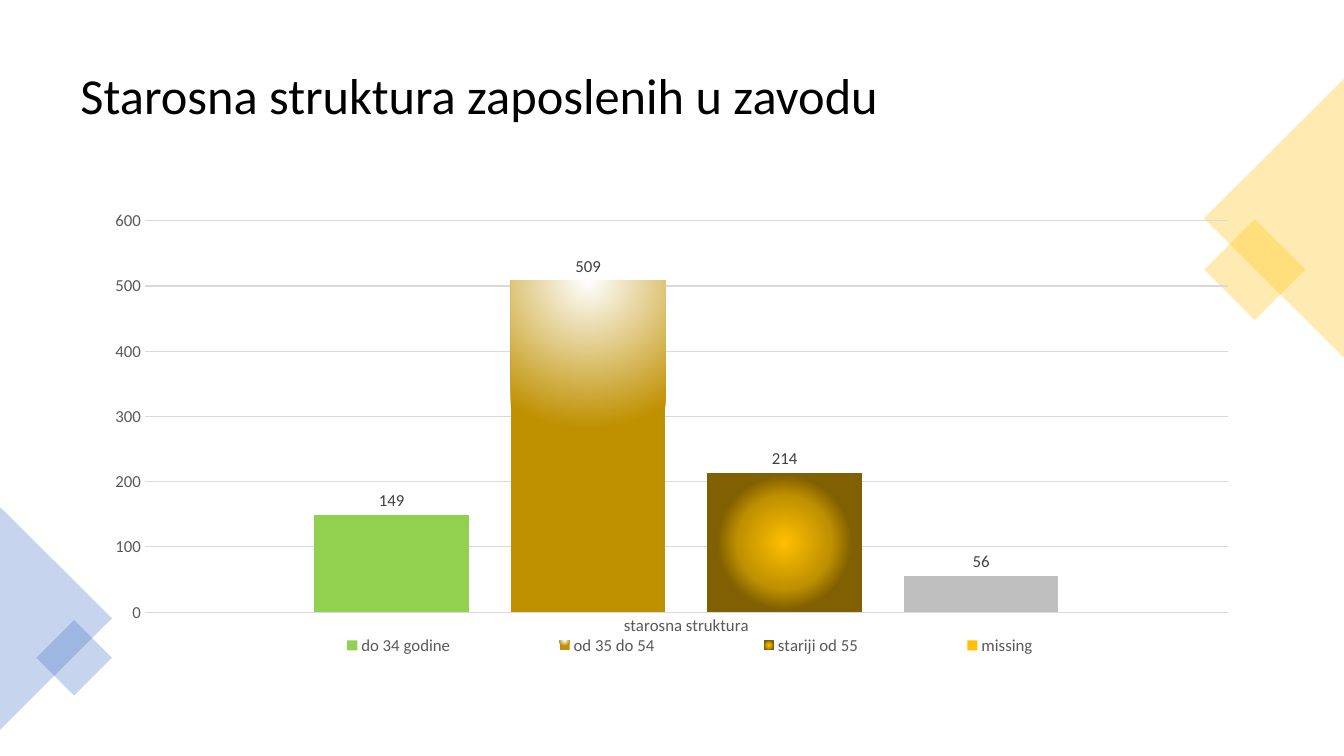
from lxml import etree
from pptx import Presentation
from pptx.chart.data import CategoryChartData
from pptx.dml.color import RGBColor
from pptx.enum.chart import XL_CHART_TYPE as ChartType, XL_LABEL_POSITION as LabelPosition
from pptx.enum.chart import XL_LEGEND_POSITION as LegendPosition, XL_TICK_MARK as TickMark
from pptx.enum.shapes import MSO_SHAPE as Shape
from pptx.enum.text import MSO_ANCHOR as Anchor
from pptx.oxml import parse_xml
from pptx.oxml.ns import nsdecls, qn
from pptx.util import Inches, Pt


class Theme:
    """Colours, font and type sizes of the slide."""
    font = "Calibri"
    title_size, chart_size = 36, 12
    black, axis_text, label_text, grid = "000000", "595959", "404040", "D9D9D9"
    gold, blue, green, gray = "FFC000", "4472C4", "92D050", "BFBFBF"
    white, ochre, brown = "FFFFFF", "BF9000", "806000"


def style_font(font, size, color):
    """Set typeface, size and colour on a font."""
    font.name, font.size = Theme.font, Pt(size)
    font.color.rgb = RGBColor.from_string(color)


def add_text(box, text, size=Theme.title_size, color=Theme.black, spacing=0.9):
    """Write one formatted paragraph into a box."""
    para = box.text_frame.paragraphs[0]
    para.line_spacing = spacing
    span = para.add_run()
    span.text = text
    style_font(span.font, size, color)


def solid(target, color):
    """Give an element a plain fill."""
    target.fill.solid()
    target.fill.fore_color.rgb = RGBColor.from_string(color)


def radial_fill(stops, focus):
    """Build a circular gradient from stops and a left, top, right, bottom focus."""
    marks = "".join(f'<a:gs pos="{pos * 1000}"><a:srgbClr val="{color}"/></a:gs>'
                    for pos, color in stops)
    sides = " ".join(f'{side}="{value * 1000}"' for side, value in zip("ltrb", focus))
    return parse_xml(f'<a:gradFill {nsdecls("a")} rotWithShape="1"><a:gsLst>{marks}</a:gsLst>'
                     f'<a:path path="circle"><a:fillToRect {sides}/></a:path></a:gradFill>')


def manual_layout(x, y, w, h, inner=False):
    """Build a fixed chart layout in fractions of the chart area."""
    target = '<c:layoutTarget val="inner"/>' if inner else ""
    return parse_xml(f'<c:layout {nsdecls("c")}><c:manualLayout>{target}'
                     '<c:xMode val="edge"/><c:yMode val="edge"/>'
                     f'<c:x val="{x}"/><c:y val="{y}"/><c:w val="{w}"/><c:h val="{h}"/>'
                     '</c:manualLayout></c:layout>')


class SlideBuilder:
    """Draws themed elements on the current page."""

    def __init__(self, deck):
        """Add a blank page to the deck."""
        self.page = deck.slides.add_slide(deck.slide_layouts[6])

    def title(self, text, *place):
        """Add the slide heading."""
        box = self.page.shapes.add_textbox(*map(Inches, place))
        box.text_frame.word_wrap = True
        box.text_frame.vertical_anchor = Anchor.MIDDLE
        add_text(box, text)

    def accent(self, kind, color, rotation, *place):
        """Add a translucent rotated decoration."""
        shape = self.page.shapes.add_shape(kind, *map(Inches, place))
        shape.rotation = rotation
        shape.shadow.inherit = False
        shape.line.fill.background()
        solid(shape, color)
        tint = shape._element.spPr.find(qn("a:solidFill"))[0]
        etree.SubElement(tint, qn("a:alpha")).set("val", "30000")

    def column_chart(self, category, columns, *place):
        """Add a clustered column chart with one series per column."""
        data = CategoryChartData()
        data.categories = [category]
        for name, value, _ in columns:
            data.add_series(name, [value])
        chart = self.page.shapes.add_chart(
            ChartType.COLUMN_CLUSTERED, *map(Inches, place), data).chart
        style_font(chart.font, Theme.chart_size, Theme.axis_text)
        chart.has_title = False
        plot = chart.plots[0]
        plot.vary_by_categories = False
        plot.gap_width, plot.overlap = 219, -27
        for series, (_, _, fill) in zip(plot.series, columns):
            self.paint_series(series, fill)
        self.style_axes(chart)
        self.style_legend(chart)
        area = chart._chartSpace.chart.plotArea
        for layout in area.findall(qn("c:layout")):
            area.remove(layout)
        area.insert(0, manual_layout(0.045, 0.04, 0.934, 0.816, inner=True))
        return chart

    def paint_series(self, series, fill):
        """Fill a series and label its value."""
        if isinstance(fill, str):
            solid(series.format, fill)
        else:
            series._element.get_or_add_spPr().insert(0, radial_fill(*fill))
        labels = series.data_labels
        labels.show_value = True
        labels.position = LabelPosition.OUTSIDE_END
        style_font(labels.font, Theme.chart_size, Theme.label_text)

    def style_axes(self, chart):
        """Format both axes and the gridlines."""
        for axis in (chart.category_axis, chart.value_axis):
            axis.major_tick_mark = axis.minor_tick_mark = TickMark.NONE
            style_font(axis.tick_labels.font, Theme.chart_size, Theme.axis_text)
        scale = chart.value_axis
        scale.minimum_scale, scale.maximum_scale, scale.major_unit = 0, 600, 100
        scale.format.line.fill.background()
        for line in (chart.category_axis.format.line, scale.major_gridlines.format.line):
            line.width = Pt(0.75)
            line.color.rgb = RGBColor.from_string(Theme.grid)

    def style_legend(self, chart):
        """Spread the legend below the columns."""
        chart.has_legend = True
        legend = chart.legend
        legend.position = LegendPosition.BOTTOM
        legend.include_in_layout = False
        style_font(legend.font, Theme.chart_size, Theme.axis_text)
        for layout in legend._element.findall(qn("c:layout")):
            legend._element.remove(layout)
        legend._element.find(qn("c:legendPos")).addnext(manual_layout(0.13, 0.9, 0.77, 0.05))


def main():
    """Build and save the age structure slide."""
    deck = Presentation()
    deck.slide_width, deck.slide_height = Inches(13.33), Inches(7.5)
    builder = SlideBuilder(deck)
    builder.title("Starosna struktura zaposlenih u zavodu", 0.7, 0.35, 11.93, 1.24)
    builder.accent(Shape.RECTANGLE, Theme.gold, 45, 12.09, 2.32, 0.71, 0.71)
    builder.accent(Shape.ISOSCELES_TRIANGLE, Theme.gold, 270, 11.25, 1.47, 2.77, 1.39)
    builder.accent(Shape.ISOSCELES_TRIANGLE, Theme.blue, 90, -0.55, 5.58, 2.21, 1.11)
    builder.accent(Shape.RECTANGLE, Theme.blue, 45, 0.47, 6.26, 0.53, 0.53)
    top_glow = [(0, Theme.white), (81, Theme.ochre), (100, Theme.ochre)], (43, 0, 43, 100)
    center_glow = ([(0, Theme.gold), (45, Theme.ochre), (65, Theme.brown), (100, Theme.brown)],
                   (50, 50, 50, 50))
    columns = [("do 34 godine", 149, Theme.green), ("od 35 do 54", 509, top_glow),
               ("stariji od 55", 214, center_glow), ("missing", 56, Theme.gold)]
    chart = builder.column_chart("starosna struktura", columns, 0.92, 2, 11.5, 4.76)
    solid(chart.plots[0].series[3].points[0].format, Theme.gray)
    deck.save("out.pptx")


if __name__ == "__main__":
    main()
